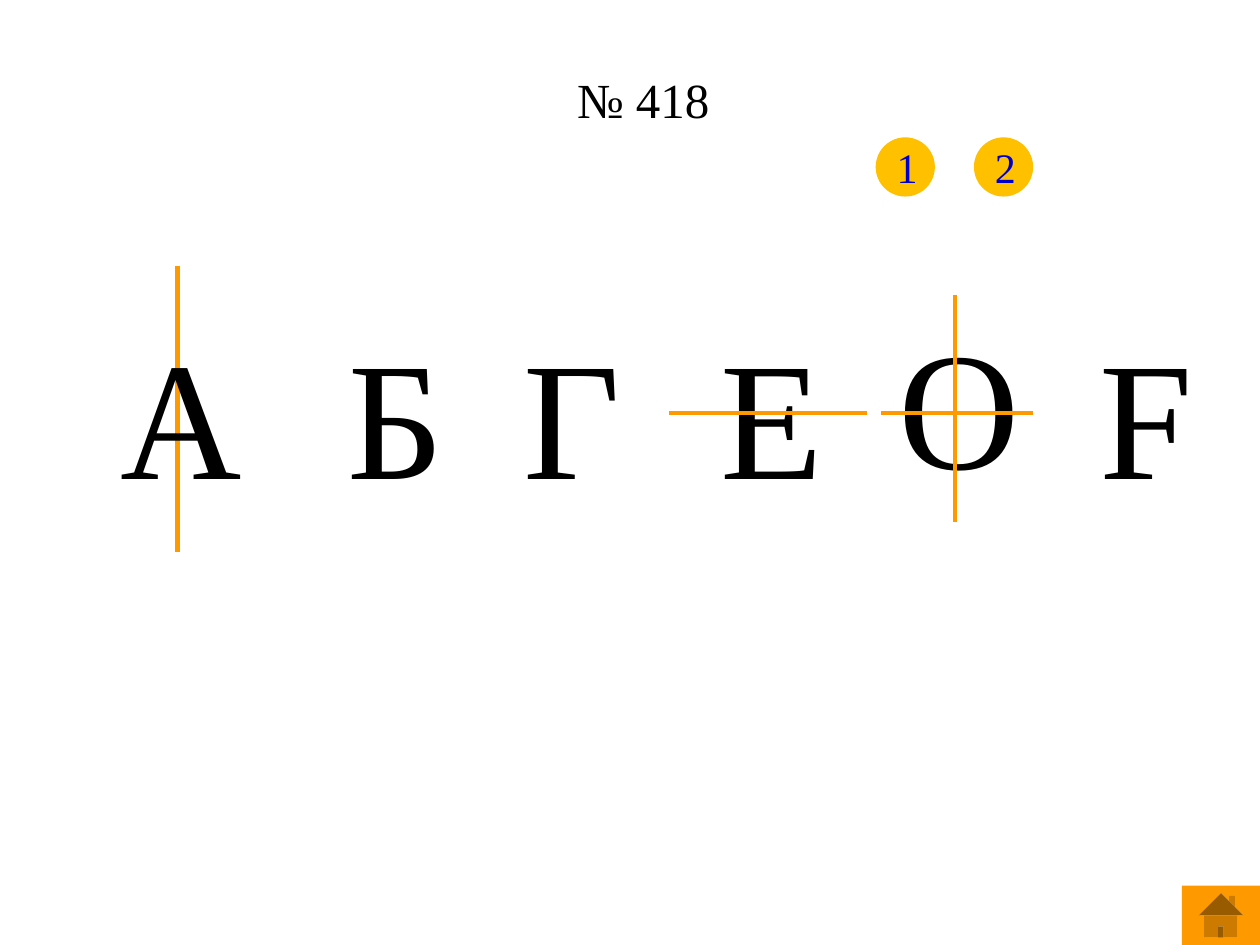
from dataclasses import dataclass

from lxml import etree
from pptx import Presentation
from pptx.dml.color import RGBColor
from pptx.enum.shapes import MSO_CONNECTOR, MSO_SHAPE
from pptx.enum.text import MSO_ANCHOR, MSO_AUTO_SIZE, PP_ALIGN
from pptx.oxml.ns import qn
from pptx.util import Inches, Pt

STRAIGHT = MSO_CONNECTOR.STRAIGHT
OVAL = MSO_SHAPE.OVAL
HOME_BUTTON = MSO_SHAPE.ACTION_BUTTON_HOME
MIDDLE = MSO_ANCHOR.MIDDLE
TOP = MSO_ANCHOR.TOP
FIT_SHAPE = MSO_AUTO_SIZE.SHAPE_TO_FIT_TEXT
NO_FIT = MSO_AUTO_SIZE.NONE
LEFT = PP_ALIGN.LEFT
CENTER = PP_ALIGN.CENTER


@dataclass(frozen=True)
class Theme:
    font: str = "Times New Roman"
    text: RGBColor = RGBColor(0x00, 0x00, 0x00)
    number: RGBColor = RGBColor(0x00, 0x00, 0xCC)
    badge: RGBColor = RGBColor(0xFF, 0xC0, 0x00)
    accent: RGBColor = RGBColor(0xFF, 0x99, 0x00)
    title_size: int = 28
    letter_size: int = 96
    number_size: int = 24
    axis_width: float = 2.5


THEME = Theme()


def write_text(shape, text, size, color, alignment, anchor):
    frame = shape.text_frame
    frame.text = text
    frame.word_wrap = True
    frame.vertical_anchor = anchor
    paragraph = frame.paragraphs[0]
    paragraph.alignment = alignment
    font = paragraph.runs[0].font
    font.name = THEME.font
    font.size = Pt(size)
    font.color.rgb = color


def set_title(slide, text, left, top, width, height):
    title = slide.shapes.title
    title.left, title.top = Inches(left), Inches(top)
    title.width, title.height = Inches(width), Inches(height)
    write_text(title, text, THEME.title_size, THEME.text, CENTER, MIDDLE)
    title.text_frame.auto_size = NO_FIT


def add_letter(slide, letter, left, width, top=2.42, alignment=LEFT):
    box = slide.shapes.add_textbox(Inches(left), Inches(top), Inches(width), Inches(1.72))
    write_text(box, letter, THEME.letter_size, THEME.text, alignment, TOP)
    box.text_frame.auto_size = FIT_SHAPE


def add_axis(slide, start_x, start_y, end_x, end_y):
    axis = slide.shapes.add_connector(
        STRAIGHT, Inches(start_x), Inches(start_y), Inches(end_x), Inches(end_y)
    )
    axis.line.color.rgb = THEME.accent
    axis.line.width = Pt(THEME.axis_width)
    etree.SubElement(axis._element.spPr, qn("a:effectLst"))


def add_filled_shape(slide, kind, left, top, width, height, color):
    shape = slide.shapes.add_shape(
        kind, Inches(left), Inches(top), Inches(width), Inches(height)
    )
    shape.shadow.inherit = False
    shape.fill.solid()
    shape.fill.fore_color.rgb = color
    shape.line.fill.background()
    return shape


def add_badge(slide, number, left):
    badge = add_filled_shape(slide, OVAL, left, 1.09, 0.47, 0.47, THEME.badge)
    write_text(badge, number, THEME.number_size, THEME.number, CENTER, MIDDLE)


def main():
    presentation = Presentation()
    presentation.slide_width = Inches(10)
    presentation.slide_height = Inches(7.5)
    slide = presentation.slides.add_slide(presentation.slide_layouts[5])

    set_title(slide, "№ 418", 4.22, 0.31, 1.77, 0.95)

    add_axis(slide, 1.41, 2.11, 1.41, 4.38)
    for letter, left, width in (
        ("А", 0.86, 1.18),
        ("Б", 2.66, 1.02),
        ("Г", 4.06, 0.95),
        ("E", 5.62, 1.36),
    ):
        add_letter(slide, letter, left, width)
    add_letter(slide, "O", 7.03, 1.17, top=2.34)
    add_letter(slide, "F", 8.2, 1.8, alignment=CENTER)

    add_axis(slide, 6.88, 3.28, 5.31, 3.28)
    add_axis(slide, 7.58, 2.34, 7.58, 4.14)
    add_axis(slide, 8.2, 3.28, 6.99, 3.28)

    for number, left in (("1", 6.95), ("2", 7.73)):
        add_badge(slide, number, left)
    add_filled_shape(slide, HOME_BUTTON, 9.38, 7.03, 0.62, 0.47, THEME.accent)

    presentation.save("out.pptx")


if __name__ == "__main__":
    main()
